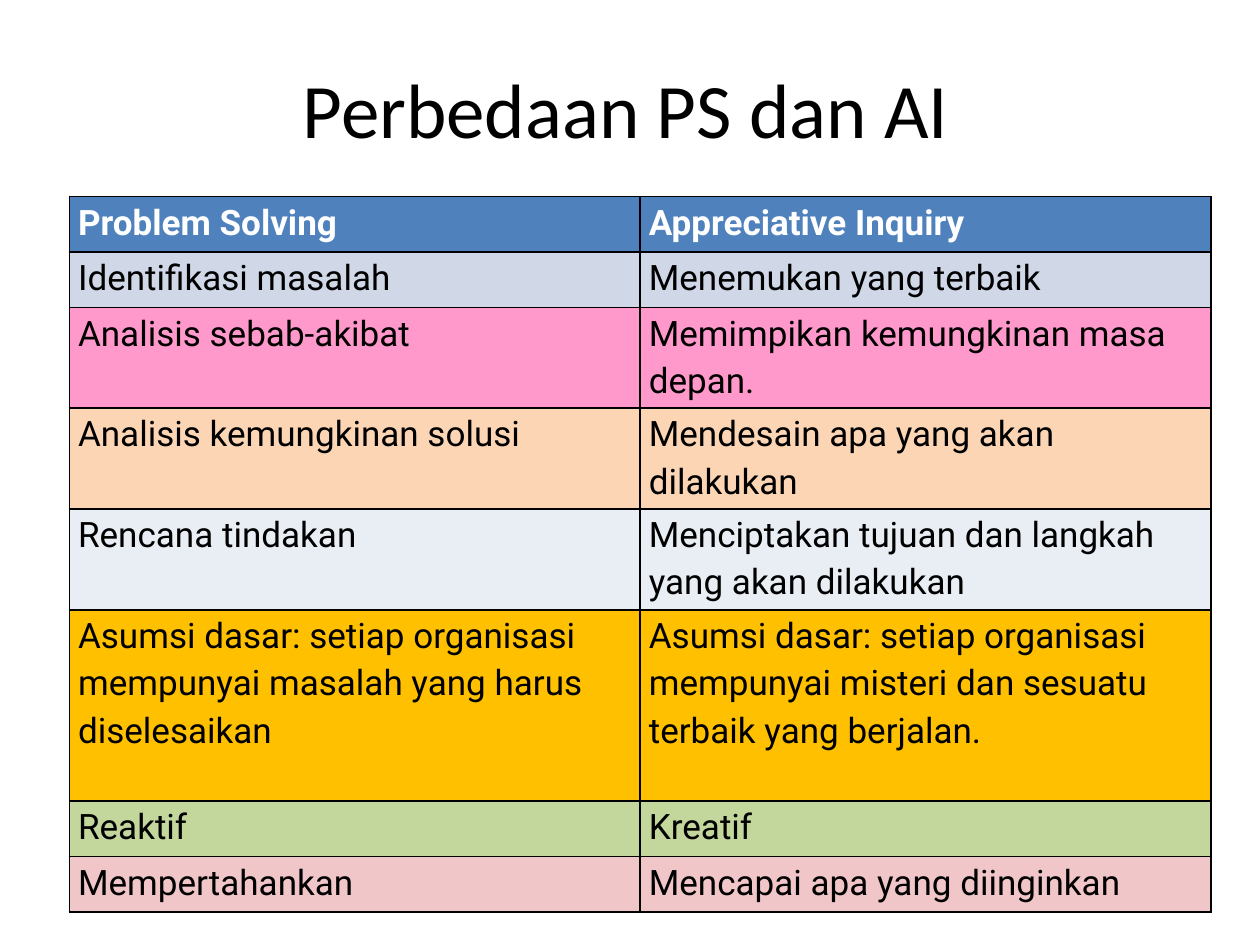
from lxml.etree import SubElement
from pptx import Presentation
from pptx.dml.color import RGBColor
from pptx.enum.text import MSO_ANCHOR, PP_ALIGN
from pptx.oxml import parse_xml
from pptx.oxml.ns import nsdecls, qn
from pptx.util import Inches, Pt

ROWS = [
    ("Problem Solving", "Appreciative Inquiry", "4F81BD", 0.44),
    ("Identifikasi masalah", "Menemukan yang terbaik", "D0D8E8", 0.44),
    ("Analisis sebab-akibat", "Memimpikan kemungkinan masa depan.", "FF99CC", 0.8),
    ("Analisis kemungkinan solusi", "Mendesain apa yang akan dilakukan", "FCD5B5", 0.8),
    ("Rencana tindakan", "Menciptakan tujuan dan langkah yang akan dilakukan", "E9EDF4", 0.8),
    ("Asumsi dasar: setiap organisasi mempunyai masalah yang harus diselesaikan",
     "Asumsi dasar: setiap organisasi mempunyai misteri dan sesuatu terbaik yang berjalan.",
     "FFC000", 1.52),
    ("Reaktif", "Kreatif", "C3D69B", 0.44),
    ("Mempertahankan", "Mencapai apa yang diinginkan", "F0C6C9", 0.44),
]
FIRST_JUSTIFIED_ROW = 6
COLUMN_WIDTH = 4.53


def color(value):
    """Turn a hex string into a colour."""
    return RGBColor.from_string(value)


def style_text(paragraph, font, size, fill, bold=False):
    """Format every run of a paragraph."""
    for span in paragraph.runs:
        span.font.name = font
        span.font.size = Pt(size)
        span.font.bold = bold
        span.font.color.rgb = color(fill)


def add_title(page, text):
    """Add the centred heading."""
    box = page.shapes.add_textbox(Inches(0.47), Inches(0.23), Inches(9), Inches(1.25))
    frame = box.text_frame
    frame.word_wrap = True
    frame.vertical_anchor = MSO_ANCHOR.MIDDLE
    frame.text = text
    paragraph = frame.paragraphs[0]
    paragraph.alignment = PP_ALIGN.CENTER
    style_text(paragraph, "Calibri", 44, "000000")


def add_borders(cell, line_color, points):
    """Draw a solid line on all four sides of a cell."""
    properties = cell._tc.get_or_add_tcPr()
    for position, side in enumerate(("lnL", "lnR", "lnT", "lnB")):
        line = parse_xml(f'<a:{side} {nsdecls("a")} w="{Pt(points)}"/>')
        fill = SubElement(line, qn("a:solidFill"))
        SubElement(fill, qn("a:srgbClr"), val=line_color)
        properties.insert(position, line)


def fill_cell(cell, text, fill, header, justified):
    """Write and format one table cell."""
    cell.margin_left = cell.margin_right = Inches(0.07)
    cell.margin_top = cell.margin_bottom = 0
    cell.fill.solid()
    cell.fill.fore_color.rgb = color(fill)
    cell.text_frame.text = text
    paragraph = cell.text_frame.paragraphs[0]
    paragraph.line_spacing = 1.15
    paragraph.alignment = PP_ALIGN.JUSTIFY if justified else PP_ALIGN.LEFT
    style_text(paragraph, "Roboto", 20, "FFFFFF" if header else "000000", header)
    add_borders(cell, "000000", 1)


def add_comparison(page):
    """Add the two-column comparison table."""
    height = sum(row[-1] for row in ROWS)
    table = page.shapes.add_table(
        len(ROWS), 2, Inches(0.55), Inches(1.56), Inches(2 * COLUMN_WIDTH), Inches(height)
    ).table
    table.horz_banding = False
    for column in table.columns:
        column.width = Inches(COLUMN_WIDTH)
    for index, (problem, inquiry, fill, row_height) in enumerate(ROWS):
        table.rows[index].height = Inches(row_height)
        for cell, text in zip(table.rows[index].cells, (problem, inquiry)):
            fill_cell(cell, text, fill, index == 0, index >= FIRST_JUSTIFIED_ROW)


def main():
    """Build and save the slide."""
    deck = Presentation()
    deck.slide_width, deck.slide_height = Inches(10), Inches(7.5)
    page = deck.slides.add_slide(deck.slide_layouts[6])
    add_title(page, "Perbedaan PS dan AI")
    add_comparison(page)
    deck.save("out.pptx")


if __name__ == "__main__":
    main()
